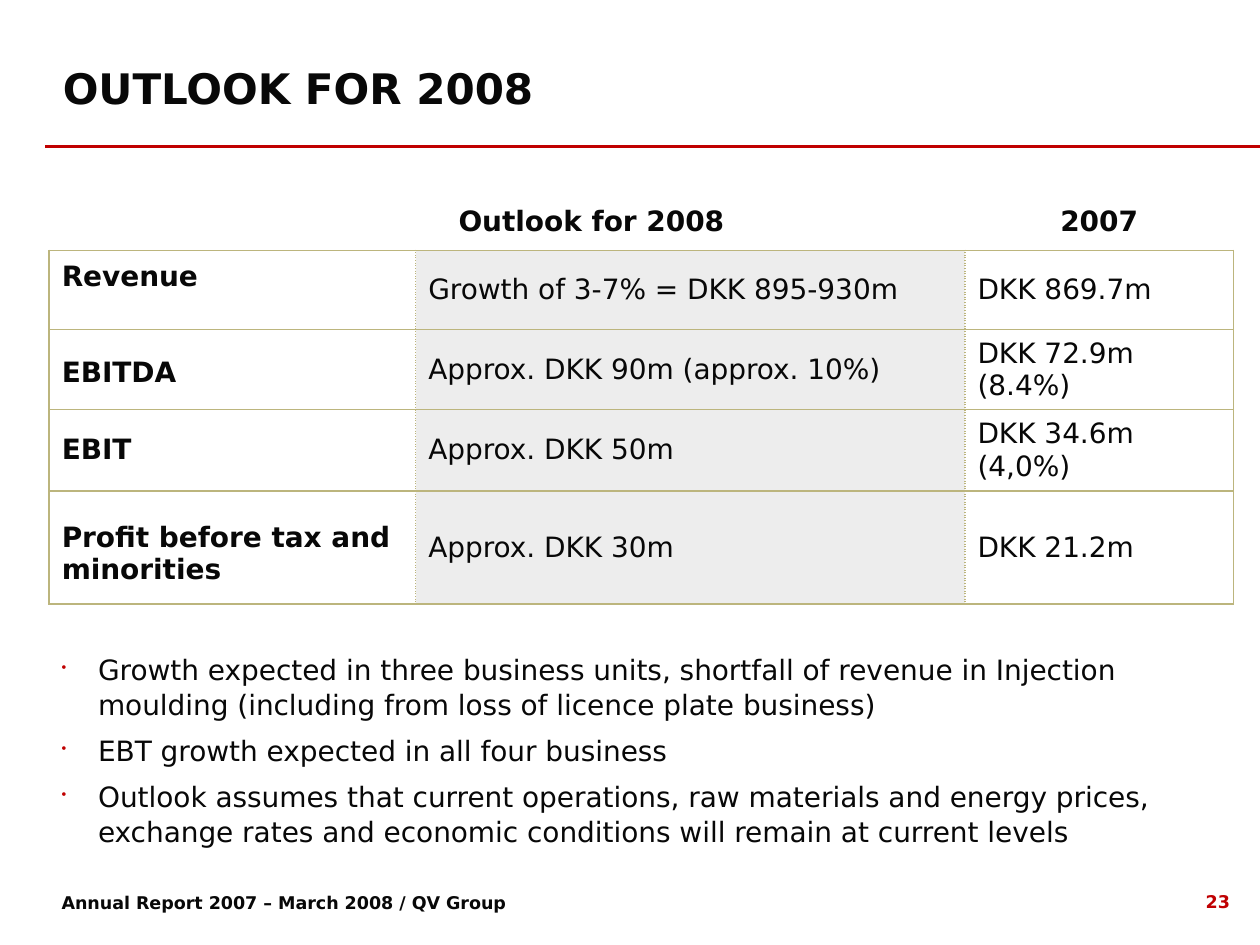
from lxml import etree
from pptx import Presentation
from pptx.dml.color import RGBColor
from pptx.enum.shapes import MSO_CONNECTOR
from pptx.enum.text import MSO_ANCHOR, PP_ALIGN
from pptx.oxml.ns import qn
from pptx.util import Pt

FONT = "DejaVu Sans"
INK, RED, GOLD, GREY = "080808", "C00000", "BCB57D", "DDDDDD"
STRAIGHT = MSO_CONNECTOR.STRAIGHT
TOP, MIDDLE = MSO_ANCHOR.TOP, MSO_ANCHOR.MIDDLE
CENTER = PP_ALIGN.CENTER

COL_WIDTHS = [209.5, 14.4, 296.6, 153.4]
HEADER_HEIGHT = 32.8
# label, label top margin, row height, outlook, previous year
ROWS = [
    ("Revenue", 5.9, 45.3, "Growth of 3-7% = DKK 895-930m", "DKK 869.7m"),
    ("EBITDA", 15.3, 45.7, "Approx. DKK 90m (approx. 10%)", "DKK 72.9m (8.4%)"),
    ("EBIT", 14.1, 46.6, "Approx. DKK 50m", "DKK 34.6m (4,0%)"),
    ("Profit before tax and minorities", 17.6, 64.6, "Approx. DKK 30m", "DKK 21.2m"),
]
BULLETS = [
    "Growth expected in three business units, shortfall of revenue in Injection "
    "moulding (including from loss of licence plate business)",
    "EBT growth expected in all four business",
    "Outlook assumes that current operations, raw materials and energy prices, "
    "exchange rates and economic conditions will remain at current levels",
]


def rgb(value):
    return RGBColor.from_string(value)


def style(p, size, bold=False, color=INK):
    for r in p.runs:
        r.font.name = FONT
        r.font.size = Pt(size)
        r.font.bold = bold
        r.font.color.rgb = rgb(color)


def add_text(s, box, text, size, bold=True, color=INK, anchor=TOP, wrap=True):
    """Add a text box, one paragraph per line of text, and return its paragraphs."""
    tf = s.shapes.add_textbox(*map(Pt, box)).text_frame
    tf.word_wrap = wrap
    tf.vertical_anchor = anchor
    tf.text = text
    for p in tf.paragraphs:
        style(p, size, bold, color)
    return tf.paragraphs


def add_rule(s, x1, x2, y):
    line = s.shapes.add_connector(STRAIGHT, Pt(x1), Pt(y), Pt(x2), Pt(y))
    line.line.color.rgb = rgb(RED)
    line.line.width = Pt(1.5)
    etree.SubElement(line._element.spPr, qn("a:effectLst"))


def set_bullet(p):
    pPr = p._p.get_or_add_pPr()
    pPr.set("marL", str(Pt(20.9)))
    pPr.set("indent", str(-Pt(20.9)))
    color = etree.SubElement(pPr, qn("a:buClr"))
    etree.SubElement(color, qn("a:srgbClr"), val=RED)
    etree.SubElement(pPr, qn("a:buSzPct"), val="50000")
    etree.SubElement(pPr, qn("a:buChar"), char="•")


def set_borders(cell, **dashes):
    """Draw the sides L, R, T, B with the given dash; sides left out get no line."""
    tcPr = cell._tc.get_or_add_tcPr()
    for i, side in enumerate("LRTB"):
        ln = etree.Element(qn(f"a:ln{side}"), w=str(Pt(1)))
        if side in dashes:
            fill = etree.SubElement(ln, qn("a:solidFill"))
            etree.SubElement(fill, qn("a:srgbClr"), val=GOLD)
            etree.SubElement(ln, qn("a:prstDash"), val=dashes[side])
        else:
            etree.SubElement(ln, qn("a:noFill"))
        tcPr.insert(i, ln)


def fill_cell(cell, text="", bold=False, anchor=MIDDLE, shaded=False):
    cell.vertical_anchor = anchor
    cell.text = text
    style(cell.text_frame.paragraphs[0], 16, bold)
    if shaded:
        cell.fill.solid()
        cell.fill.fore_color.rgb = rgb(GREY)
        tint = cell._tc.tcPr.find(".//" + qn("a:srgbClr"))
        etree.SubElement(tint, qn("a:alpha"), val="50000")
    else:
        cell.fill.background()


def add_outlook_table(s):
    heights = [HEADER_HEIGHT] + [row[2] for row in ROWS]
    frame = s.shapes.add_table(len(heights), len(COL_WIDTHS), Pt(28.1), Pt(110.2),
                               Pt(sum(COL_WIDTHS)), Pt(sum(heights)))
    table = frame.table
    for column, width in zip(table.columns, COL_WIDTHS):
        column.width = Pt(width)
    for row, height in zip(table.rows, heights):
        row.height = Pt(height)

    table.cell(0, 0).merge(table.cell(0, 1))
    for c, text in enumerate(["", "", "Outlook for 2008", "2007"]):
        cell = table.cell(0, c)
        fill_cell(cell, text, bold=True)
        set_borders(cell, B="solid")
    table.cell(0, 3).text_frame.paragraphs[0].alignment = CENTER

    for i, (label, margin, _, outlook, previous) in enumerate(ROWS, 1):
        cells = [table.cell(i, c) for c in range(4)]
        cells[1].merge(cells[2])
        fill_cell(cells[0], label, bold=True, anchor=TOP)
        cells[0].margin_top = Pt(margin)
        fill_cell(cells[1], outlook, shaded=True)
        fill_cell(cells[2], shaded=True)
        fill_cell(cells[3], previous)
        set_borders(cells[0], L="solid", R="sysDot", T="solid", B="solid")
        for cell in cells[1:3]:
            set_borders(cell, L="sysDot", R="sysDot", T="solid", B="solid")
        set_borders(cells[3], L="sysDot", R="solid", T="solid", B="solid")


def add_bullets(s):
    paragraphs = add_text(s, (28.1, 368.6, 674.6, 129.6), "\n".join(BULLETS), 16, bold=False)
    for i, p in enumerate(paragraphs):
        set_bullet(p)
        p.line_spacing = 1.04
        p.space_before = Pt(3.2 if i else 0)
        p.space_after = Pt(3.2)


def main():
    prs = Presentation()
    prs.slide_width, prs.slide_height = Pt(720), Pt(540)
    s = prs.slides.add_slide(prs.slide_layouts[6])
    add_rule(s, 26, 720, 83.7)
    title = add_text(s, (28.8, 18.7, 684, 67), "OUTLOOK FOR 2008", 24, anchor=MIDDLE)
    title[0].line_spacing = 0.9
    add_outlook_table(s)
    add_bullets(s)
    add_text(s, (28.1, 506.2, 272.2, 19.4),
             "Annual Report 2007 – March 2008 / QV Group", 10, wrap=False)
    number = add_text(s, (671.8, 505.4, 48.2, 18.7), "23", 10, color="C00002")
    number[0].alignment = CENTER
    prs.save("out.pptx")


if __name__ == "__main__":
    main()
